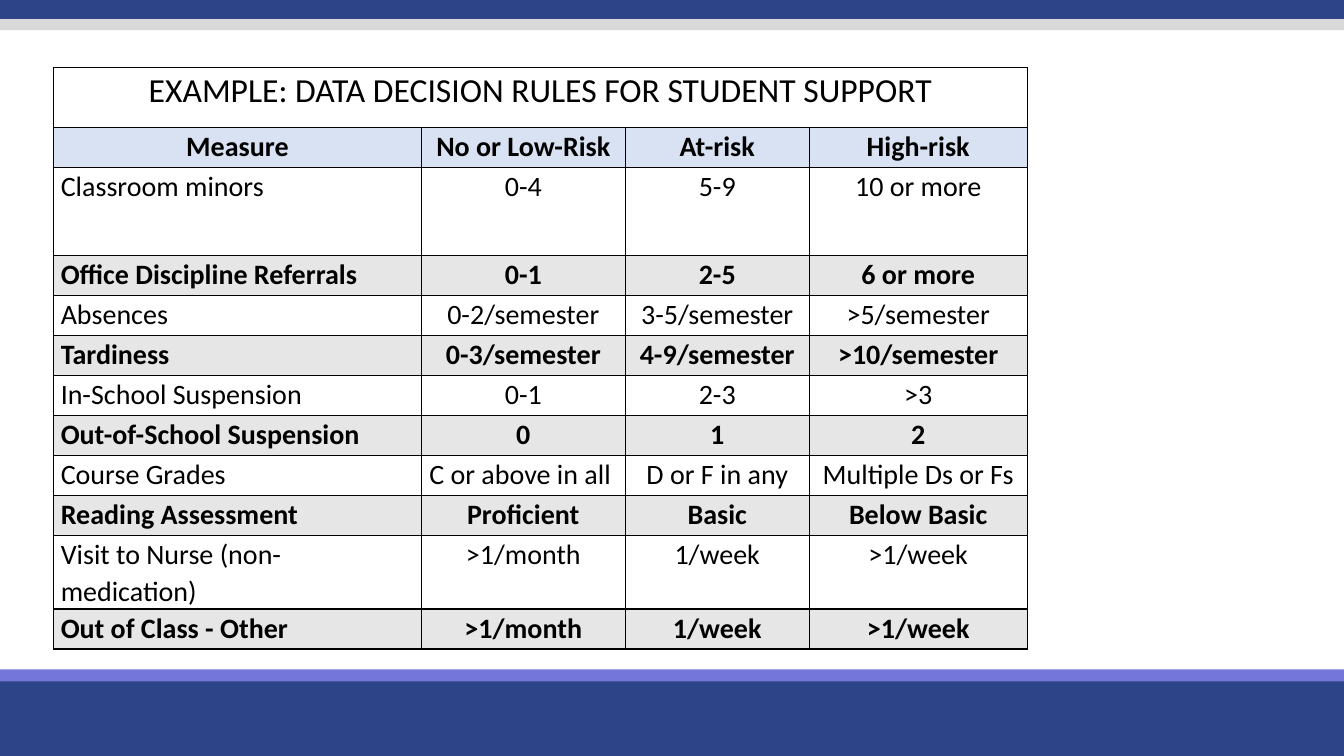
from lxml import etree
from pptx import Presentation
from pptx.dml.color import RGBColor
from pptx.enum.shapes import MSO_SHAPE
from pptx.enum.text import PP_ALIGN
from pptx.oxml.ns import qn
from pptx.util import Pt

RECT = MSO_SHAPE.RECTANGLE
LEFT, CENTER = PP_ALIGN.LEFT, PP_ALIGN.CENTER

COLORS = {
    "navy": "2E4488",
    "violet": "7476DA",
    "silver": "D9D9D9",
    "header": "D9E2F3",
    "stripe": "E7E6E6",
    "black": "000000",
}
SLIDE_W, SLIDE_H = 960, 540

# Top and height of each full-width band, from back to front
BANDS = [
    (482.4, 57.6, "navy"),
    (478.1, 8.6, "violet"),
    (-2.2, 15.8, "navy"),
    (13.7, 7.9, "silver"),
]

TITLE = "EXAMPLE: DATA DECISION RULES FOR STUDENT SUPPORT"
HEADER = ["Measure", "No or Low-Risk", "At-risk", "High-risk"]
RULES = [
    ["Classroom minors", "0-4", "5-9", "10 or more"],
    ["Office Discipline Referrals", "0-1", "2-5", "6 or more"],
    ["Absences", "0-2/semester", "3-5/semester", ">5/semester"],
    ["Tardiness", "0-3/semester", "4-9/semester", ">10/semester"],
    ["In-School Suspension", "0-1", "2-3", ">3"],
    ["Out-of-School Suspension", "0", "1", "2"],
    ["Course Grades", "C or above in all ", "D or F in any", "Multiple Ds or Fs"],
    ["Reading Assessment", "Proficient", "Basic", "Below Basic"],
    ["Visit to Nurse (non-medication)", ">1/month", "1/week", ">1/week"],
    ["Out of Class - Other", ">1/month", "1/week", ">1/week"],
]
COL_WIDTHS = [262.8, 145.6, 131.5, 155.6]
ROW_H = 28.6
TALL_ROWS = {0: 42.5, 2: 63, 10: 52.6}


def rgb(name):
    return RGBColor.from_string(COLORS[name])


def add_bands(s, x, y, w):
    for top, height, color in BANDS:
        band = s.shapes.add_shape(RECT, Pt(x), Pt(y + top), Pt(w), Pt(height))
        band.shadow.inherit = False
        band.fill.solid()
        band.fill.fore_color.rgb = rgb(color)
        band.line.fill.background()


def add_borders(cell, color="black", width=1):
    tc_pr = cell._tc.get_or_add_tcPr()
    for side in ("a:lnL", "a:lnR", "a:lnT", "a:lnB"):
        ln = etree.SubElement(tc_pr, qn(side), w=str(Pt(width)))
        fill = etree.SubElement(ln, qn("a:solidFill"))
        etree.SubElement(fill, qn("a:srgbClr"), val=COLORS[color])


def write(cell, text, size=20, bold=False, align=CENTER, color="black"):
    p = cell.text_frame.paragraphs[0]
    p.alignment = align
    p.line_spacing = 1.07
    r = p.add_run()
    r.text = text
    r.font.name = "Calibri"
    r.font.size = Pt(size)
    r.font.bold = bold
    r.font.color.rgb = rgb(color)


def style_cell(cell, fill=None):
    cell.margin_left = cell.margin_right = Pt(5.2)
    cell.margin_top = cell.margin_bottom = 0
    add_borders(cell)
    if fill:
        cell.fill.solid()
        cell.fill.fore_color.rgb = rgb(fill)
    else:
        cell.fill.background()


def add_rules_table(s, x, y):
    rows = [[TITLE, "", "", ""], HEADER] + RULES
    heights = [TALL_ROWS.get(i, ROW_H) for i in range(len(rows))]
    frame = s.shapes.add_table(len(rows), len(COL_WIDTHS), Pt(x), Pt(y),
                               Pt(sum(COL_WIDTHS)), Pt(sum(heights)))
    table = frame.table
    table.first_row = table.horz_banding = False
    for column, width in zip(table.columns, COL_WIDTHS):
        column.width = Pt(width)
    for row, height in zip(table.rows, heights):
        row.height = Pt(height)

    # Title row spans the table; below the header every second rule is striped
    table.cell(0, 0).merge(table.cell(0, len(COL_WIDTHS) - 1))
    for i, texts in enumerate(rows):
        striped = i > 1 and i % 2 == 1
        fill = "header" if i == 1 else "stripe" if striped else None
        for j, text in enumerate(texts):
            cell = table.cell(i, j)
            style_cell(cell, fill)
            if text:
                write(cell, text, size=24 if i == 0 else 20,
                      bold=fill is not None,
                      align=LEFT if i > 1 and j == 0 else CENTER)


def main():
    prs = Presentation()
    prs.slide_width, prs.slide_height = Pt(SLIDE_W), Pt(SLIDE_H)
    s = prs.slides.add_slide(prs.slide_layouts[6])
    add_bands(s, 0, 0, SLIDE_W)
    add_rules_table(s, 38.2, 48.4)
    prs.save("out.pptx")


if __name__ == "__main__":
    main()
